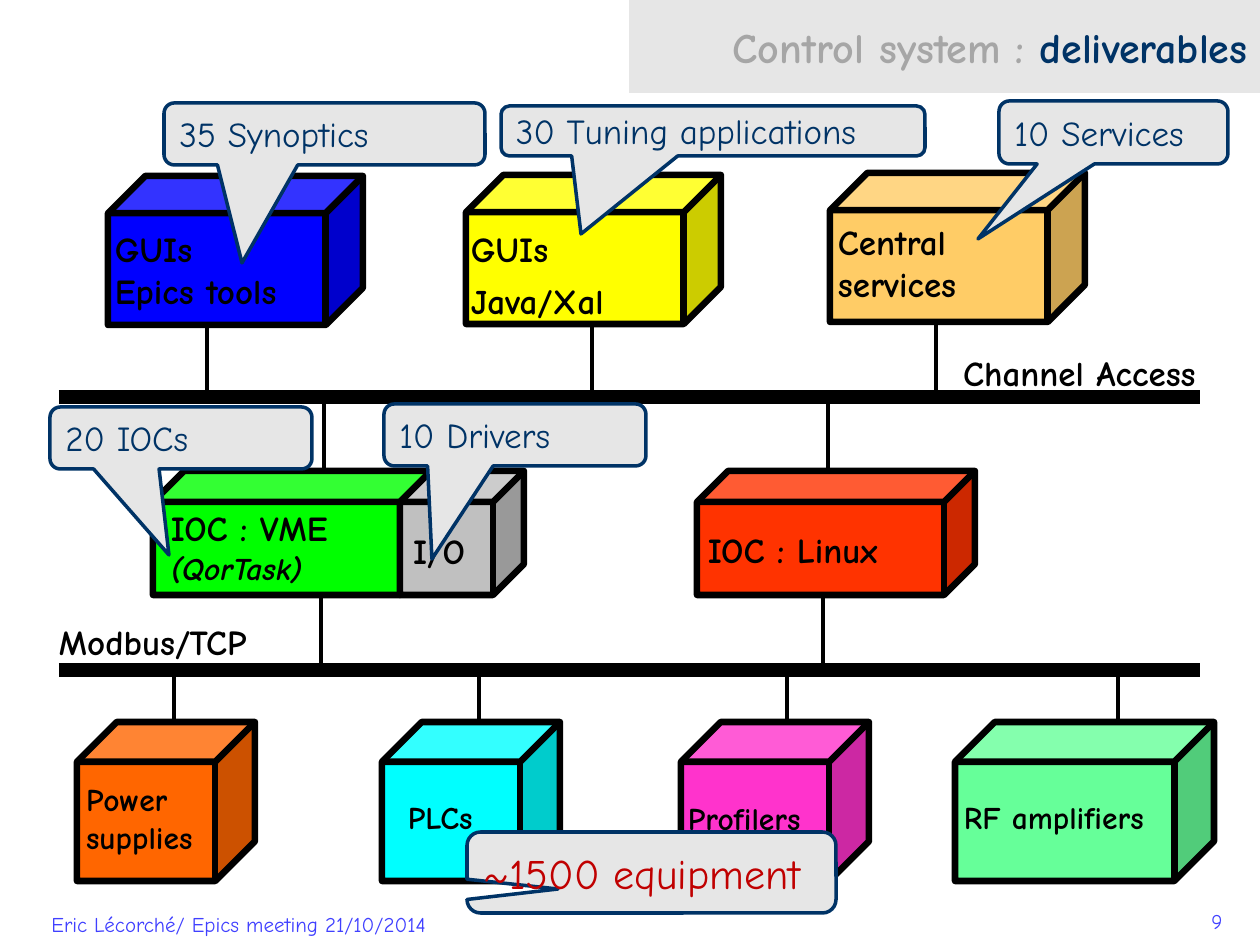
"""Build the control system deliverables slide."""
from dataclasses import dataclass

from lxml.etree import SubElement
from pptx import Presentation
from pptx.dml.color import RGBColor
from pptx.enum.shapes import MSO_CONNECTOR as Connector, MSO_SHAPE as Shape
from pptx.enum.text import MSO_ANCHOR as Anchor, MSO_AUTO_SIZE as AutoSize, PP_ALIGN as Align
from pptx.oxml.ns import qn
from pptx.util import Pt

SCALE = 914400 / 126
FONT = "Comic Neue"
COLORS = {
    "black": "000000", "panel": "E6E6E6", "navy": "003366", "grey": "A6A6A6",
    "footer": "4040FF", "crimson": "C00000", "blue": "0000FF", "yellow": "FFFF00",
    "sand": "FFCC66", "green": "00FF00", "silver": "C0C0C0", "red": "FF3300",
    "orange": "FF6600", "cyan": "00FFFF", "pink": "FF33CC", "mint": "66FF99",
}


@dataclass(frozen=True)
class Box:
    left: int
    top: int
    width: int
    height: int


@dataclass(frozen=True)
class Cube:
    box: Box
    color: str


@dataclass(frozen=True)
class Label:
    box: Box
    text: str
    size: int = 20
    space_before: int = 0


@dataclass(frozen=True)
class Callout:
    box: Box
    tip: tuple[int, int]
    text: str
    size: int = 20
    color: str = "navy"


@dataclass(frozen=True)
class Link:
    x: int
    top: int
    bottom: int


BUS_LEFT, BUS_RIGHT = 59, 1200
CHANNEL_BUS, FIELD_BUS = 397, 670

LINKS = [
    *(Link(x, 323, CHANNEL_BUS) for x in (207, 592, 936)),
    *(Link(x, CHANNEL_BUS, 471) for x in (324, 828)),
    *(Link(x, 595, FIELD_BUS) for x in (321, 823)),
    *(Link(x, FIELD_BUS, 722) for x in (174, 479, 787, 1118)),
]

CUBES = [
    Cube(Box(108, 176, 255, 149), "blue"),
    Cube(Box(466, 175, 255, 149), "yellow"),
    Cube(Box(830, 173, 255, 149), "sand"),
    Cube(Box(153, 471, 278, 124), "green"),
    Cube(Box(400, 471, 124, 124), "silver"),
    Cube(Box(697, 471, 278, 124), "red"),
    Cube(Box(77, 722, 178, 159), "orange"),
    Cube(Box(382, 722, 178, 159), "cyan"),
    Cube(Box(681, 722, 188, 159), "pink"),
    Cube(Box(955, 722, 259, 159), "mint"),
]

LABELS = [
    Label(Box(115, 228, 203, 84), "GUIs\vEpics tools"),
    Label(Box(471, 227, 203, 96), "GUIs\nJava/Xal", space_before=6),
    Label(Box(838, 221, 203, 84), "Central services"),
    Label(Box(963, 352, 258, 39), "Channel Access"),
    Label(Box(413, 529, 69, 43), "I/O"),
    Label(Box(708, 528, 228, 43), "IOC : Linux"),
    Label(Box(59, 621, 208, 39), "Modbus/TCP"),
    Label(Box(86, 780, 122, 77), "Power\nsupplies", 18),
    Label(Box(408, 798, 87, 39), "PLCs", 18),
    Label(Box(688, 799, 149, 38), "Profilers", 18),
    Label(Box(964, 798, 203, 39), "RF amplifiers", 18),
]

CALLOUTS = [
    Callout(Box(164, 103, 321, 62), (242, 263), "35 Synoptics"),
    Callout(Box(501, 106, 424, 50), (581, 234), "30 Tuning applications"),
    Callout(Box(999, 101, 229, 63), (978, 239), "10 Services"),
    Callout(Box(50, 407, 262, 62), (169, 555), "20 IOCs"),
    Callout(Box(384, 404, 262, 62), (432, 559), "10 Drivers"),
    Callout(Box(467, 832, 369, 81), (558, 889), "~1500 equipment", 24, "crimson"),
]


def emu(pixels: int) -> int:
    return round(pixels * SCALE)


def place(box: Box) -> tuple[int, int, int, int]:
    return emu(box.left), emu(box.top), emu(box.width), emu(box.height)


def rgb(name: str) -> RGBColor:
    return RGBColor.from_string(COLORS[name])


def style_run(run, size: int, color: str, bold: bool = False) -> None:
    run.font.name = FONT
    run.font.size = Pt(size)
    run.font.bold = bold
    run.font.color.rgb = rgb(color)


def style_text(frame, size: int, color: str, bold: bool = False, align=Align.LEFT) -> None:
    frame.word_wrap = True
    for paragraph in frame.paragraphs:
        paragraph.alignment = align
        for run in paragraph.runs:
            style_run(run, size, color, bold)


def add_title(slide) -> None:
    title = slide.shapes.title
    title.left, title.top, title.width, title.height = place(Box(629, 0, 631, 93))
    title.fill.solid()
    title.fill.fore_color.rgb = rgb("panel")
    frame = title.text_frame
    frame.auto_size = AutoSize.NONE
    frame.vertical_anchor = Anchor.MIDDLE
    paragraph = frame.paragraphs[0]
    paragraph.alignment = Align.RIGHT
    for text, color in (("Control system :", "grey"), (" deliverables", "navy")):
        run = paragraph.add_run()
        run.text = text
        style_run(run, 24, color, True)


def add_line(slide, start: tuple[int, int], end: tuple[int, int], width: float) -> None:
    line = slide.shapes.add_connector(Connector.STRAIGHT, *map(emu, start + end))
    line.line.color.rgb = rgb("black")
    line.line.width = Pt(width)
    SubElement(line._element.spPr, qn("a:effectLst"))


def add_outlined(slide, kind, box: Box, fill: str, outline: str, width: float):
    shape = slide.shapes.add_shape(kind, *place(box))
    shape.shadow.inherit = False
    shape.fill.solid()
    shape.fill.fore_color.rgb = rgb(fill)
    shape.line.color.rgb = rgb(outline)
    shape.line.width = Pt(width)
    return shape


def add_text(slide, box: Box, text: str):
    frame = slide.shapes.add_textbox(*place(box)).text_frame
    frame.text = text
    return frame


def add_label(slide, label: Label):
    frame = add_text(slide, label.box, label.text)
    frame.margin_left = frame.margin_top = frame.margin_right = frame.margin_bottom = 0
    style_text(frame, label.size, "black", True)
    for paragraph in frame.paragraphs[1:]:
        paragraph.space_before = Pt(label.space_before)
    return frame


def add_callout(slide, callout: Callout) -> None:
    box = callout.box
    shape = add_outlined(slide, Shape.ROUNDED_RECTANGULAR_CALLOUT, box, "panel", "navy", 2)
    shape.adjustments[0] = (callout.tip[0] - box.left) / box.width - 0.5
    shape.adjustments[1] = (callout.tip[1] - box.top) / box.height - 0.5
    shape.text_frame.text = callout.text
    shape.text_frame.vertical_anchor = Anchor.MIDDLE
    style_text(shape.text_frame, callout.size, callout.color)


def main() -> None:
    presentation = Presentation()
    presentation.slide_width, presentation.slide_height = emu(1260), emu(945)
    slide = presentation.slides.add_slide(presentation.slide_layouts[5])
    add_title(slide)
    footer = add_text(slide, Box(39, 905, 939, 45), "Eric Lécorché/ Epics meeting 21/10/2014")
    style_text(footer, 12, "footer")
    number = add_text(slide, Box(1072, 902, 163, 38), "9")
    style_text(number, 12, "footer", align=Align.RIGHT)
    for link in LINKS:
        add_line(slide, (link.x, link.top), (link.x, link.bottom), 2.5)
    for bus in (CHANNEL_BUS, FIELD_BUS):
        add_line(slide, (BUS_LEFT, bus), (BUS_RIGHT, bus), 7.5)
    for cube in CUBES:
        add_outlined(slide, Shape.CUBE, cube.box, cube.color, "black", 3.75)
    for label in LABELS:
        add_label(slide, label)
    vme = add_label(slide, Label(Box(171, 507, 208, 81), "IOC : VME\n(QorTask)"))
    system = vme.paragraphs[1].runs[0].font
    system.size, system.italic = Pt(18), True
    for callout in CALLOUTS:
        add_callout(slide, callout)
    presentation.save("out.pptx")


if __name__ == "__main__":
    main()
